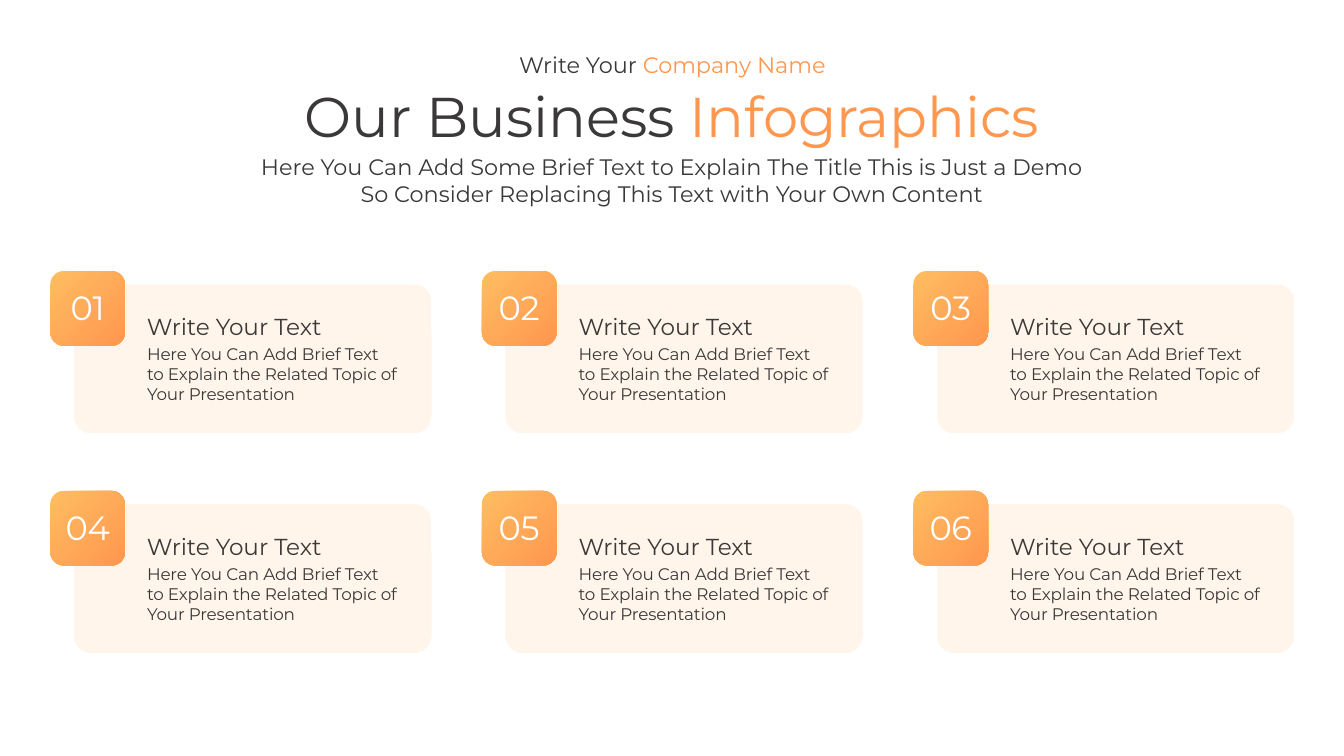
from dataclasses import dataclass

from lxml.etree import SubElement
from pptx import Presentation
from pptx.dml.color import RGBColor
from pptx.enum.shapes import MSO_SHAPE
from pptx.enum.text import MSO_ANCHOR, MSO_AUTO_SIZE, PP_ALIGN
from pptx.oxml.ns import qn
from pptx.shapes.autoshape import Shape
from pptx.shapes.group import GroupShape
from pptx.util import Emu, Pt

PX = 9144  # one hundredth of an inch


@dataclass(frozen=True)
class Theme:
    font: str = "Montserrat"
    ink: str = "3B3838"
    white: str = "FFFFFF"
    accent: str = "FF974F"
    accent_light: str = "FEBD61"
    panel: str = "FFF5EB"
    panel_light: str = "FFF8EB"
    title_size: float = 40
    number_size: float = 24
    heading_size: float = 16.5
    intro_size: float = 16
    body_size: float = 12


@dataclass(frozen=True)
class Area:
    left: int
    top: int
    width: int
    height: int

    def shifted(self, across: int, down: int) -> "Area":
        return Area(self.left + across, self.top + down, self.width, self.height)

    def emu(self) -> tuple[Emu, ...]:
        return tuple(Emu(n * PX) for n in (self.left, self.top, self.width, self.height))


@dataclass(frozen=True)
class Card:
    number: str
    heading: str
    lines: tuple[str, ...]


THEME = Theme()
SLIDE = Area(0, 0, 1333, 750)
COMPANY = Area(473, 46, 388, 37)
TITLE = Area(238, 76, 857, 77)
INTRO = Area(238, 147, 857, 64)

# Parts of the first card; the others are shifted by the steps.
PANEL = Area(73, 282, 355, 148)
BODY = Area(136, 336, 281, 71)
HEADING = Area(136, 305, 280, 38)
BADGE = Area(50, 269, 74, 74)
NUMBER = Area(55, 280, 64, 50)
COLUMNS, COLUMN_STEP, ROW_STEP = 3, 428, 218

CARD_LINES = (
    "Here You Can Add Brief Text",
    "to Explain the Related Topic of",
    "Your Presentation",
)
CARDS = [Card(f"{n:02}", "Write Your Text", CARD_LINES) for n in range(1, 7)]


def place(box: Shape, area: Area) -> Shape:
    box.left, box.top, box.width, box.height = area.emu()
    return box


def write(box: Shape, *lines: str, size: float, color: str = THEME.ink,
          accent: str = "", align: PP_ALIGN = PP_ALIGN.LEFT,
          spacing: int = 0, wrap: bool = True) -> None:
    """Fill a box with one paragraph a line; accent is added to the last one in colour."""
    frame = box.text_frame
    frame.word_wrap = wrap
    frame.auto_size = MSO_AUTO_SIZE.SHAPE_TO_FIT_TEXT
    frame.vertical_anchor = MSO_ANCHOR.TOP
    for index, line in enumerate(lines):
        para = frame.add_paragraph() if index else frame.paragraphs[0]
        para.alignment = align
        para.space_before = Pt(0)
        parts = [(line, color)]
        if accent and index == len(lines) - 1:
            parts.append((accent, THEME.accent))
        for text, shade in parts:
            span = para.add_run()
            span.text = text
            span.font.name = THEME.font
            span.font.size = Pt(size)
            span.font.color.rgb = RGBColor.from_string(shade)
            if spacing:
                span.font._element.set("spc", str(spacing))


def add_rounded(group: GroupShape, area: Area, rounding: float,
                start: str, end: str) -> Shape:
    box = group.shapes.add_shape(MSO_SHAPE.ROUNDED_RECTANGLE, *area.emu())
    box.adjustments[0] = rounding
    box.shadow.inherit = False
    box.line.fill.background()
    box.fill.gradient()
    box.fill.gradient_angle = 45
    for stop, color in zip(box.fill.gradient_stops, (start, end)):
        stop.color.rgb = RGBColor.from_string(color)
    return box


def make_radial(box: Shape) -> None:
    """Let the gradient spread from the lower right corner."""
    gradient = box._element.spPr.find(qn("a:gradFill"))
    gradient.remove(gradient.find(qn("a:lin")))
    circle = SubElement(gradient, qn("a:path"), path="circle")
    SubElement(circle, qn("a:fillToRect"), l="100000", t="100000")


def add_card(page, card: Card, across: int, down: int) -> None:
    content = page.shapes.add_group_shape()
    add_rounded(content, PANEL.shifted(across, down), 0.12,
                THEME.panel, THEME.panel_light)
    body = content.shapes.add_textbox(*BODY.shifted(across, down).emu())
    write(body, *card.lines, size=THEME.body_size, spacing=-10)
    heading = content.shapes.add_textbox(*HEADING.shifted(across, down).emu())
    write(heading, card.heading, size=THEME.heading_size)

    marker = page.shapes.add_group_shape()
    make_radial(add_rounded(marker, BADGE.shifted(across, down), 0.18,
                            THEME.accent, THEME.accent_light))
    number = marker.shapes.add_textbox(*NUMBER.shifted(across, down).emu())
    write(number, card.number, size=THEME.number_size, color=THEME.white,
          align=PP_ALIGN.CENTER, spacing=-20, wrap=False)


def main() -> None:
    deck = Presentation()
    deck.slide_width, deck.slide_height = SLIDE.emu()[2:]
    page = deck.slides.add_slide(deck.slide_layouts[0])

    write(place(page.shapes.title, TITLE), "Our Business ", accent="Infographics",
          size=THEME.title_size, align=PP_ALIGN.CENTER)
    write(place(page.placeholders[1], INTRO),
          "Here You Can Add Some Brief Text to Explain The Title This is Just a Demo "
          "So Consider Replacing This Text with Your Own Content",
          size=THEME.intro_size, align=PP_ALIGN.CENTER)
    write(page.shapes.add_textbox(*COMPANY.emu()), "Write Your ",
          accent="Company Name", size=THEME.intro_size, align=PP_ALIGN.CENTER)

    for index, card in enumerate(CARDS):
        row, column = divmod(index, COLUMNS)
        add_card(page, card, column * COLUMN_STEP, row * ROW_STEP)

    deck.save("out.pptx")


if __name__ == "__main__":
    main()
